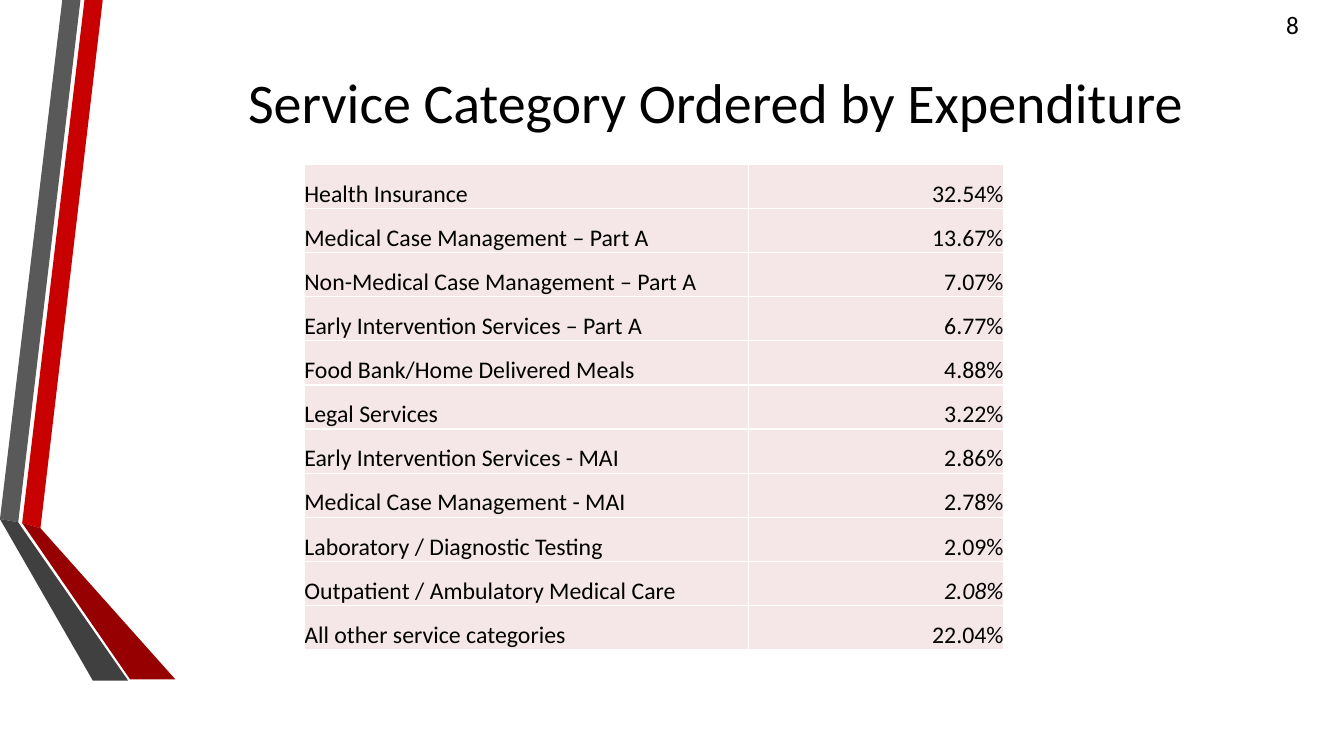
from lxml import etree
from pptx import Presentation
from pptx import util as u
from pptx.dml.color import RGBColor
from pptx.enum import text
from pptx.oxml.ns import qn

FONT = "Calibri"
BLACK, WHITE, ROSE = "000000", "FFFFFF", "F5E7E7"

# Ribbon outlines in centimetres
RIBBONS = [
    ("C80000", [(0.56, 13.18), (1.02, 13.31), (2.59, 0), (2.13, 0)]),
    ("595959", [(2.03, 0), (1.57, 0), (0, 13.08), (0.46, 13.16)]),
    ("960000", [(0.56, 13.18), (3.28, 17.12), (4.42, 17.12), (1.02, 13.31)]),
    ("404040", [(3.23, 17.15), (0.56, 13.31), (0.46, 13.16), (0, 13.08), (2.34, 17.15)]),
]

EXPENDITURES = [
    ("Health Insurance", "32.54%"),
    ("Medical Case Management – Part A", "13.67%"),
    ("Non-Medical Case Management – Part A", "7.07%"),
    ("Early Intervention Services – Part A", "6.77%"),
    ("Food Bank/Home Delivered Meals", "4.88%"),
    ("Legal Services", "3.22%"),
    ("Early Intervention Services - MAI", "2.86%"),
    ("Medical Case Management - MAI", "2.78%"),
    ("Laboratory / Diagnostic Testing", "2.09%"),
    ("Outpatient / Ambulatory Medical Care", "2.08%"),
    ("All other service categories", "22.04%"),
]
ITALIC_VALUE = "2.08%"


def paint(fill, color):
    fill.solid()
    fill.fore_color.rgb = RGBColor.from_string(color)


def write(para, words, size, align, italic=False):
    para.alignment = align
    span = para.add_run()
    span.text = words
    span.font.name = FONT
    span.font.size = u.Pt(size)
    span.font.italic = italic
    span.font.color.rgb = RGBColor.from_string(BLACK)


def add_ribbon(page, color, points):
    corners = [(u.Cm(x), u.Cm(y)) for x, y in points]
    builder = page.shapes.build_freeform(*corners[0])
    builder.add_line_segments(corners[1:], close=True)
    ribbon = builder.convert_to_shape()
    ribbon.shadow.inherit = False
    paint(ribbon.fill, color)
    ribbon.line.fill.background()


def add_label(page, words, place, size, align, anchor):
    box = page.shapes.add_textbox(*(u.Cm(length) for length in place))
    frame = box.text_frame
    frame.word_wrap = True
    frame.vertical_anchor = anchor
    write(frame.paragraphs[0], words, size, align)


def add_borders(cell, color, width):
    properties = cell._tc.get_or_add_tcPr()
    for side in ("lnL", "lnR", "lnT", "lnB"):
        line = etree.SubElement(properties, qn(f"a:{side}"), w=str(u.Pt(width)))
        fill = etree.SubElement(line, qn("a:solidFill"))
        etree.SubElement(fill, qn("a:srgbClr"), val=color)


def fill_cell(cell, words, align):
    cell.margin_left = cell.margin_right = cell.margin_top = cell.margin_bottom = 0
    cell.vertical_anchor = text.MSO_ANCHOR.BOTTOM
    add_borders(cell, WHITE, 1)
    paint(cell.fill, ROSE)
    write(cell.text_frame.paragraphs[0], words, 17, align, words == ITALIC_VALUE)


def add_expenditure_table(page):
    table = page.shapes.add_table(
        len(EXPENDITURES), 2, u.Cm(7.67), u.Cm(4.14), u.Cm(17.62), u.Cm(12.24)
    ).table
    table.first_row = table.horz_banding = False
    table.columns[0].width = u.Cm(11.2)
    table.columns[1].width = u.Cm(6.42)
    for row, (category, share) in enumerate(EXPENDITURES):
        fill_cell(table.cell(row, 0), category, text.PP_ALIGN.LEFT)
        fill_cell(table.cell(row, 1), share, text.PP_ALIGN.RIGHT)


def main():
    deck = Presentation()
    deck.slide_width, deck.slide_height = u.Cm(33.87), u.Cm(19.05)
    page = deck.slides.add_slide(deck.slide_layouts[6])
    paint(page.background.fill, WHITE)
    for color, points in RIBBONS:
        add_ribbon(page, color, points)
    add_label(page, "8", (32.16, 0.1, 1.7, 1.02), 18,
              text.PP_ALIGN.LEFT, text.MSO_ANCHOR.TOP)
    add_label(page, "Service Category Ordered by Expenditure", (4.11, 0.1, 27.84, 4.88), 40,
              text.PP_ALIGN.CENTER, text.MSO_ANCHOR.MIDDLE)
    add_expenditure_table(page)
    deck.save("out.pptx")


if __name__ == "__main__":
    main()
